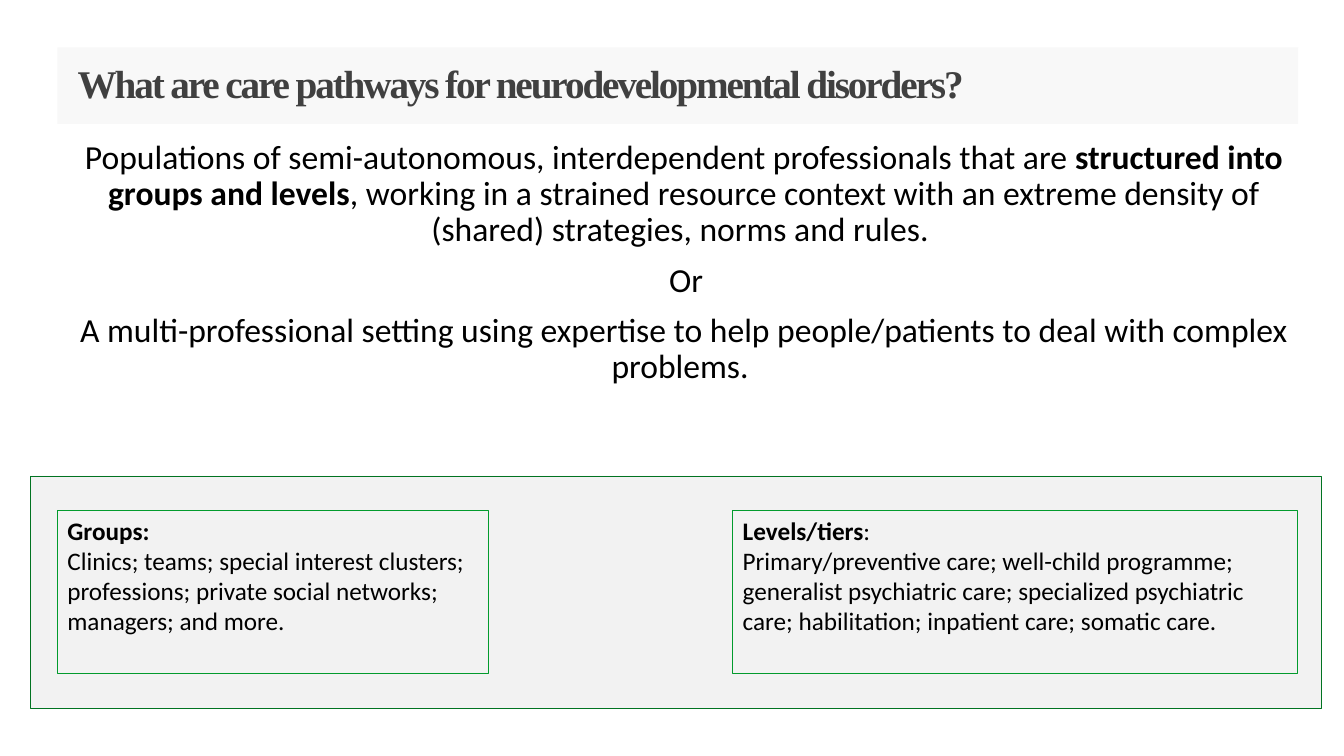
from lxml import etree
from pptx import Presentation
from pptx.dml.color import RGBColor
from pptx.enum import shapes, text
from pptx.oxml import ns
from pptx.util import Pt

BLACK = RGBColor(0x00, 0x00, 0x00)
DARK_GREY = RGBColor(0x40, 0x40, 0x40)
LIGHT_GREY = RGBColor(0xF2, 0xF2, 0xF2)
DARK_GREEN = RGBColor(0x01, 0x73, 0x21)
GREEN = RGBColor(0x02, 0x9B, 0x2D)


def add_box(left, top, width, height, fill=None, line=None, line_width=0.75):
    shape = slide.shapes.add_shape(
        shapes.MSO_SHAPE.RECTANGLE, Pt(left), Pt(top), Pt(width), Pt(height))
    shape.shadow.inherit = False
    if fill is None:
        shape.fill.background()
    else:
        shape.fill.solid()
        shape.fill.fore_color.rgb = fill
    if line is None:
        shape.line.fill.background()
    else:
        shape.line.color.rgb = line
        shape.line.width = Pt(line_width)
    shape.text_frame.word_wrap = True
    return shape


def write_paragraph(frame, index, runs, size, alignment, color=BLACK, font="Calibri"):
    paragraph = frame.add_paragraph() if index else frame.paragraphs[0]
    paragraph.alignment = alignment
    paragraph.font.name = font
    paragraph.font.size = Pt(size)
    paragraph.font.color.rgb = color
    for words, bold in runs:
        run = paragraph.add_run()
        run.text = words
        run.font.bold = bold
    return paragraph


presentation = Presentation()
presentation.slide_width = Pt(960)
presentation.slide_height = Pt(540)
slide = presentation.slides.add_slide(presentation.slide_layouts[6])

add_box(21.6, 339.84, 922.32, 166.32, LIGHT_GREY, DARK_GREEN, 0.25)

title = add_box(41.04, 33.84, 886.32, 54.72, LIGHT_GREY)
title_color = title.fill._xPr.find(".//" + ns.qn("a:srgbClr"))
etree.SubElement(title_color, ns.qn("a:alpha"), val="50000")
frame = title.text_frame
frame.vertical_anchor = text.MSO_ANCHOR.MIDDLE
frame.margin_left = Pt(14.4)
frame.margin_top = frame.margin_right = frame.margin_bottom = 0
paragraph = write_paragraph(
    frame, 0, [("What are care pathways for neurodevelopmental disorders?", True)],
    28, text.PP_ALIGN.LEFT, DARK_GREY, "Times New Roman")
paragraph.line_spacing = 0.9
paragraph.runs[0]._r.get_or_add_rPr().set("spc", "-150")

definitions = [
    [("Populations of semi-autonomous, interdependent professionals that are ", False),
     ("structured into groups and levels", True),
     (", working in a strained resource context with an extreme density of "
      "(shared) strategies, norms and rules. ", False)],
    [("Or ", False)],
    [("A multi-professional setting using expertise to help people/patients "
      "to deal with complex problems. ", False)],
]
body = slide.shapes.add_textbox(Pt(50.4), Pt(100.08), Pt(876.24), Pt(210.24))
frame = body.text_frame
frame.word_wrap = True
frame.margin_left = frame.margin_top = frame.margin_right = frame.margin_bottom = 0
for index, runs in enumerate(definitions):
    paragraph = write_paragraph(frame, index, runs, 24, text.PP_ALIGN.CENTER)
    paragraph.line_spacing = 0.9
    paragraph.space_before = Pt(10)
frame.paragraphs[1]._p.get_or_add_pPr().set("marL", str(Pt(8.64)))

cards = [
    (41.04, 308.16, [("Groups:", True)],
     "Clinics; teams; special interest clusters; professions; "
     "private social networks; managers; and more."),
    (523.44, 403.2, [("Levels/tiers", True), (":", False)],
     "Primary/preventive care; well-child programme; generalist psychiatric care; "
     "specialized psychiatric care; habilitation; inpatient care; somatic care."),
]
for left, width, heading, examples in cards:
    card = add_box(left, 364.32, width, 116.64, line=GREEN)
    frame = card.text_frame
    frame.vertical_anchor = text.MSO_ANCHOR.TOP
    for index, runs in enumerate([heading, [(examples, False)]]):
        write_paragraph(frame, index, runs, 18, text.PP_ALIGN.LEFT)

presentation.save("out.pptx")
